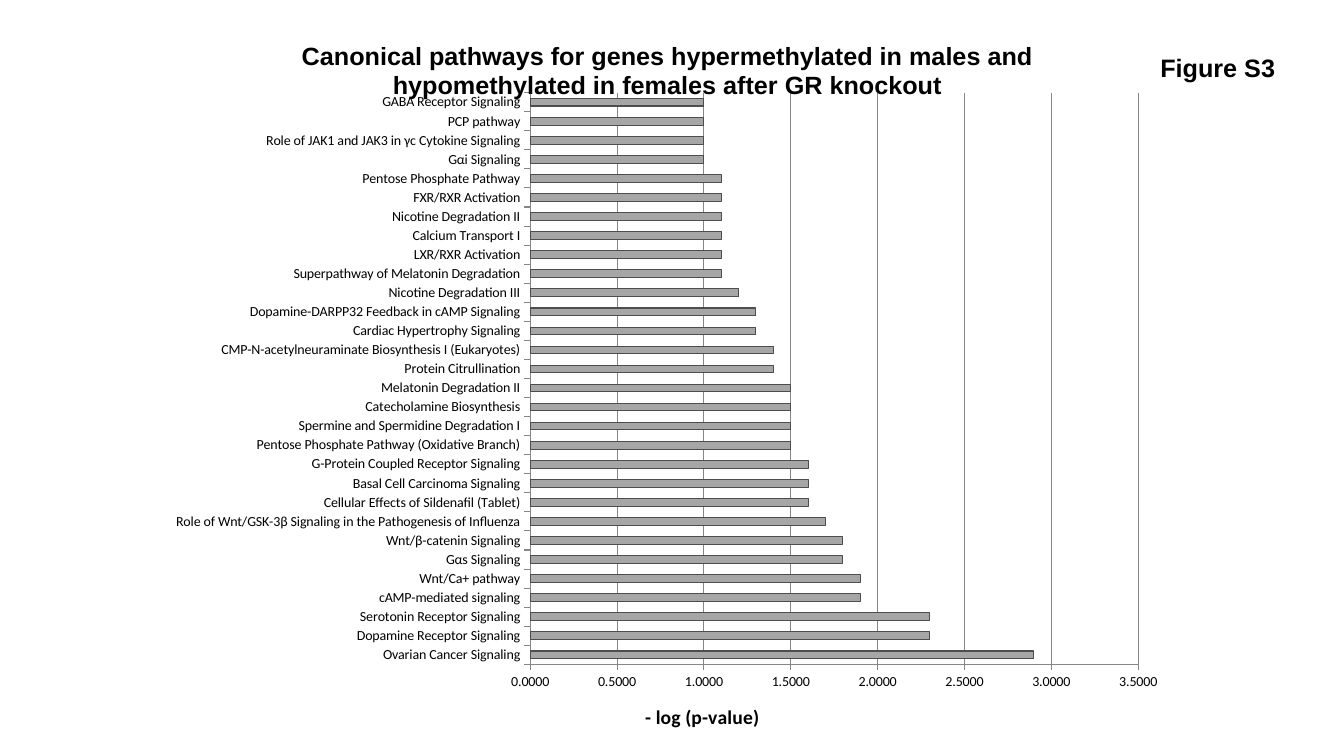
"""Build the bar chart slide of canonical pathways."""
from pptx import Presentation
from pptx.chart.data import CategoryChartData
from pptx.dml.color import RGBColor
from pptx.enum.chart import XL_CHART_TYPE, XL_TICK_MARK
from pptx.oxml import parse_xml
from pptx.oxml.ns import nsdecls, qn
from pptx.util import Inches, Pt

BAR = XL_CHART_TYPE.BAR_CLUSTERED
OUTSIDE = XL_TICK_MARK.OUTSIDE
BLACK = RGBColor(0, 0, 0)
FILL = RGBColor(0xA6, 0xA6, 0xA6)
EDGE = RGBColor(0x4D, 0x4D, 0x4D)
GRID = RGBColor(0x86, 0x86, 0x86)
TITLE = ("Canonical pathways for genes hypermethylated in males and "
         "hypomethylated in females after GR knockout")
PATHWAYS = [
    ("Ovarian Cancer Signaling", 2.9),
    ("Dopamine Receptor Signaling", 2.3),
    ("Serotonin Receptor Signaling", 2.3),
    ("cAMP-mediated signaling", 1.9),
    ("Wnt/Ca+ pathway", 1.9),
    ("Gαs Signaling", 1.8),
    ("Wnt/β-catenin Signaling", 1.8),
    ("Role of Wnt/GSK-3β Signaling in the Pathogenesis of Influenza", 1.7),
    ("Cellular Effects of Sildenafil (Tablet)", 1.6),
    ("Basal Cell Carcinoma Signaling", 1.6),
    ("G-Protein Coupled Receptor Signaling", 1.6),
    ("Pentose Phosphate Pathway (Oxidative Branch)", 1.5),
    ("Spermine and Spermidine Degradation I", 1.5),
    ("Catecholamine Biosynthesis", 1.5),
    ("Melatonin Degradation II", 1.5),
    ("Protein Citrullination", 1.4),
    ("CMP-N-acetylneuraminate Biosynthesis I (Eukaryotes)", 1.4),
    ("Cardiac Hypertrophy Signaling", 1.3),
    ("Dopamine-DARPP32 Feedback in cAMP Signaling", 1.3),
    ("Nicotine Degradation III", 1.2),
    ("Superpathway of Melatonin Degradation", 1.1),
    ("LXR/RXR Activation", 1.1),
    ("Calcium Transport I", 1.1),
    ("Nicotine Degradation II", 1.1),
    ("FXR/RXR Activation", 1.1),
    ("Pentose Phosphate Pathway", 1.1),
    ("Gαi Signaling", 1.0),
    ("Role of JAK1 and JAK3 in γc Cytokine Signaling", 1.0),
    ("PCP pathway", 1.0),
    ("GABA Receptor Signaling", 1.0),
]


def write(frame, text, size, face):
    """Set bold black text in a text frame."""
    frame.text = text
    font = frame.paragraphs[0].runs[0].font
    font.name, font.size, font.bold = face, Pt(size), True
    font.color.rgb = BLACK


def place(part, index, target, **spots):
    """Give a chart part a manual layout in shares of the chart."""
    for old in part.findall(qn("c:layout")):
        part.remove(old)
    rules = [("layoutTarget", "inner")] if target else []
    rules += [("xMode", "edge"), ("yMode", "edge"), *spots.items()]
    body = "".join(f'<c:{name} val="{val}"/>' for name, val in rules)
    part.insert(index, parse_xml(
        f'<c:layout {nsdecls("c")}><c:manualLayout>{body}'
        '</c:manualLayout></c:layout>'))


def style_line(line, color):
    """Draw a thin solid line."""
    line.color.rgb = color
    line.width = Pt(0.75)


def style_axes(chart):
    """Set ticks, scale, grid and title of the axes."""
    for axis in (chart.category_axis, chart.value_axis):
        axis.major_tick_mark = OUTSIDE
        style_line(axis.format.line, GRID)
    axis = chart.value_axis
    axis.minimum_scale, axis.maximum_scale, axis.major_unit = 0, 3.5, 0.5
    axis.has_major_gridlines = True
    style_line(axis.major_gridlines.format.line, GRID)
    axis.tick_labels.number_format = "0.0000"
    axis.tick_labels.number_format_is_linked = False
    write(axis.axis_title.text_frame, "- log (p-value)", 14, "Calibri")
    place(axis.axis_title.element, 1, False, x=0.48, y=0.96)


def add_bars(slide):
    """Add the pathway chart."""
    data = CategoryChartData(number_format="0.0000")
    names, values = zip(*PATHWAYS)
    data.categories = names
    data.add_series("Series 1", values)
    chart = slide.shapes.add_chart(
        BAR, Inches(1.54), Inches(0.14), Inches(10.05), Inches(7.16),
        data).chart
    chart.has_legend = False
    chart.font.name, chart.font.size = "Calibri", Pt(10)
    chart.font.color.rgb = BLACK
    write(chart.chart_title.text_frame, TITLE, 18, "Arial")
    place(chart.chart_title.element, 1, False, x=0.14, y=0.03)
    plot = chart.plots[0]
    plot.gap_width, plot.vary_by_categories = 150, False
    bars = plot.series[0].format
    bars.fill.solid()
    bars.fill.fore_color.rgb = FILL
    style_line(bars.line, EDGE)
    style_axes(chart)
    area = chart.element.find(".//" + qn("c:plotArea"))
    place(area, 0, True, x=0.37, y=0.11, w=0.6, h=0.8)


def add_label(slide):
    """Add the figure number."""
    box = slide.shapes.add_textbox(
        Inches(11.41), Inches(0.47), Inches(1.41), Inches(0.4))
    write(box.text_frame, "Figure S3", 18, "Arial")


def main():
    """Build and save the slide."""
    deck = Presentation()
    deck.slide_width, deck.slide_height = Inches(13.33), Inches(7.5)
    slide = deck.slides.add_slide(deck.slide_layouts[6])
    add_bars(slide)
    add_label(slide)
    deck.save("out.pptx")


if __name__ == "__main__":
    main()
